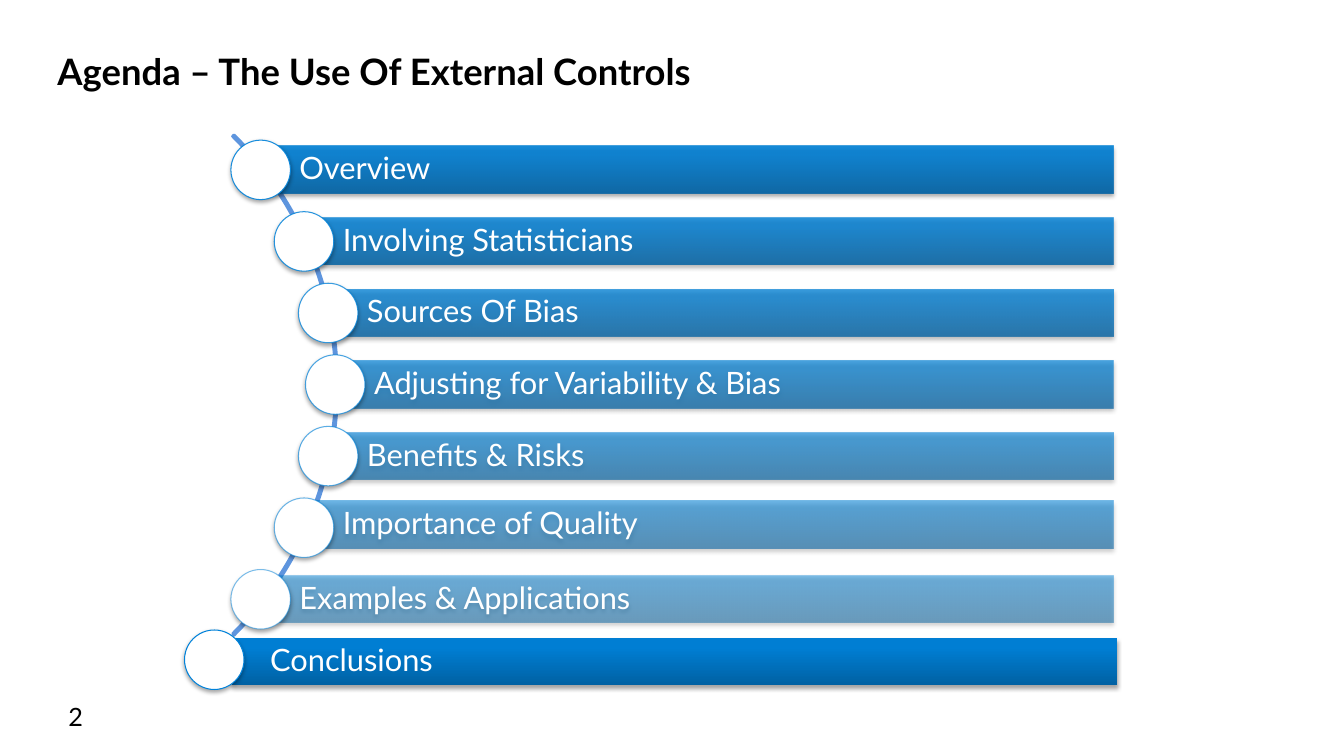
"""Builds the agenda slide with a curved list of topics."""
import pptx
import pptx.dml.color
import pptx.enum.shapes
import pptx.enum.text
import pptx.oxml
import pptx.oxml.ns
import pptx.util

Inches = pptx.util.Inches
Pt = pptx.util.Pt
RGBColor = pptx.dml.color.RGBColor
MSO_SHAPE = pptx.enum.shapes.MSO_SHAPE
MSO_ANCHOR = pptx.enum.text.MSO_ANCHOR
PP_ALIGN = pptx.enum.text.PP_ALIGN

BLACK = RGBColor(0x00, 0x00, 0x00)
WHITE = RGBColor(0xFF, 0xFF, 0xFF)
ARC_BLUE = RGBColor(0x5E, 0x95, 0xDE)
RING_BLUE = RGBColor(0x00, 0x82, 0xDA)
BAR_STOPS = [
    (0, RGBColor(0x00, 0x61, 0xA3)),
    (80, RGBColor(0x00, 0x7E, 0xD3)),
    (100, RGBColor(0x00, 0x7F, 0xD4)),
]
NS = pptx.oxml.ns.nsdecls("a")

TOPICS = [
    ("Overview", 2.29),
    ("Involving Statisticians", 2.72),
    ("Sources Of Bias", 2.96),
    ("Adjusting for Variability & Bias", 3.03),
    ("Benefits & Risks", 2.96),
    ("Importance of Quality", 2.72),
    ("Examples & Applications", 2.29),
]
FIRST_TOP, STEP = 1.39, 0.71
BAR_RIGHT, BAR_HEIGHT, DOT_SIZE = 11.04, 0.47, 0.59


class AgendaSlide:
    def __init__(self, prs, font="Lato"):
        self.font = font
        self.slide = prs.slides.add_slide(prs.slide_layouts[5])

    def style(self, p, size, color, bold=False):
        p.alignment = PP_ALIGN.LEFT
        p.font.name = self.font
        p.font.size = Pt(size)
        p.font.color.rgb = color
        p.font.bold = bold

    def title(self, text, x, y, w, h):
        sp = self.slide.shapes.title
        sp.left, sp.top, sp.width, sp.height = map(Inches, (x, y, w, h))
        tf = sp.text_frame
        tf.text = text
        tf.auto_size = pptx.enum.text.MSO_AUTO_SIZE.NONE
        tf.vertical_anchor = MSO_ANCHOR.TOP
        tf.margin_left = tf.margin_top = tf.margin_right = tf.margin_bottom = 0
        self.style(tf.paragraphs[0], 26, BLACK, True)

    def page_number(self, text, x, y, w, h):
        sp = self.slide.shapes.add_textbox(*map(Inches, (x, y, w, h)))
        tf = sp.text_frame
        tf.word_wrap = True
        tf.text = text
        self.style(tf.paragraphs[0], 18, BLACK)

    def shape(self, kind, x, y, w, h):
        sp = self.slide.shapes.add_shape(kind, *map(Inches, (x, y, w, h)))
        sp.shadow.inherit = False
        return sp

    def drop_shadow(self, sp):
        effects = sp._element.spPr.find(pptx.oxml.ns.qn("a:effectLst"))
        effects.append(pptx.oxml.parse_xml(
            f'<a:outerShdw {NS} blurRad="{Pt(3.1)}" dist="{Pt(1.8)}" dir="5400000" '
            'rotWithShape="0"><a:srgbClr val="000000"><a:alpha val="35000"/>'
            '</a:srgbClr></a:outerShdw>'))

    def arc(self, x, y, size):
        sp = self.shape(MSO_SHAPE.BLOCK_ARC, x, y, size, size)
        for i, value in enumerate((189, 27, 0.003)):
            sp.adjustments[i] = value
        sp.fill.background()
        sp.line.color.rgb = ARC_BLUE
        sp.line.width = Pt(2)

    def bar(self, text, x, y, right, alpha):
        sp = self.shape(MSO_SHAPE.RECTANGLE, x, y, right - x, BAR_HEIGHT)
        sp.line.fill.background()
        stops = "".join(
            f'<a:gs pos="{pos * 1000}"><a:srgbClr val="{color}">'
            f'<a:alpha val="{alpha * 1000}"/></a:srgbClr></a:gs>'
            for pos, color in BAR_STOPS)
        geometry = sp._element.spPr.find(pptx.oxml.ns.qn("a:prstGeom"))
        geometry.addnext(pptx.oxml.parse_xml(
            f'<a:gradFill {NS} rotWithShape="1"><a:gsLst>{stops}</a:gsLst>'
            '<a:lin ang="16200000" scaled="0"/></a:gradFill>'))
        self.drop_shadow(sp)
        tf = sp.text_frame
        tf.text = text
        tf.word_wrap = True
        tf.vertical_anchor = MSO_ANCHOR.MIDDLE
        tf.margin_left = Inches(0.38)
        tf.margin_top = tf.margin_right = tf.margin_bottom = Inches(0.06)
        p = tf.paragraphs[0]
        p.line_spacing = 0.9
        self.style(p, 22, WHITE)

    def dot(self, x, y, alpha):
        sp = self.shape(MSO_SHAPE.OVAL, x, y, DOT_SIZE, DOT_SIZE)
        sp.fill.solid()
        sp.fill.fore_color.rgb = WHITE
        sp.line.color.rgb = RING_BLUE
        sp.line.width = Pt(0.75)
        color = sp.line._ln.find(".//" + pptx.oxml.ns.qn("a:srgbClr"))
        color.append(pptx.oxml.parse_xml(f'<a:alpha {NS} val="{alpha * 1000}"/>'))
        self.drop_shadow(sp)


def main():
    prs = pptx.Presentation()
    prs.slide_width, prs.slide_height = Inches(13.33), Inches(7.5)
    agenda = AgendaSlide(prs)
    agenda.title("Agenda – The Use Of External Controls", 0.57, 0.49, 10.74, 0.89)
    agenda.page_number("2", 0.58, 6.91, 12.18, 0.21)
    agenda.arc(-3.67, 0.31, 7.02)
    for i, (topic, x) in enumerate(TOPICS):
        y = FIRST_TOP + i * STEP
        alpha = round(90 - 40 * i / (len(TOPICS) - 1))
        bar_y = 4.97 if topic == "Importance of Quality" else y + 0.06
        agenda.bar(topic, x + 0.3, bar_y, BAR_RIGHT, alpha)
        agenda.dot(x, y, alpha)
    agenda.bar("Conclusions", 2.3, 6.33, 11.08, 100)
    agenda.dot(1.83, 6.25, 100)
    prs.save("out.pptx")


if __name__ == "__main__":
    main()
